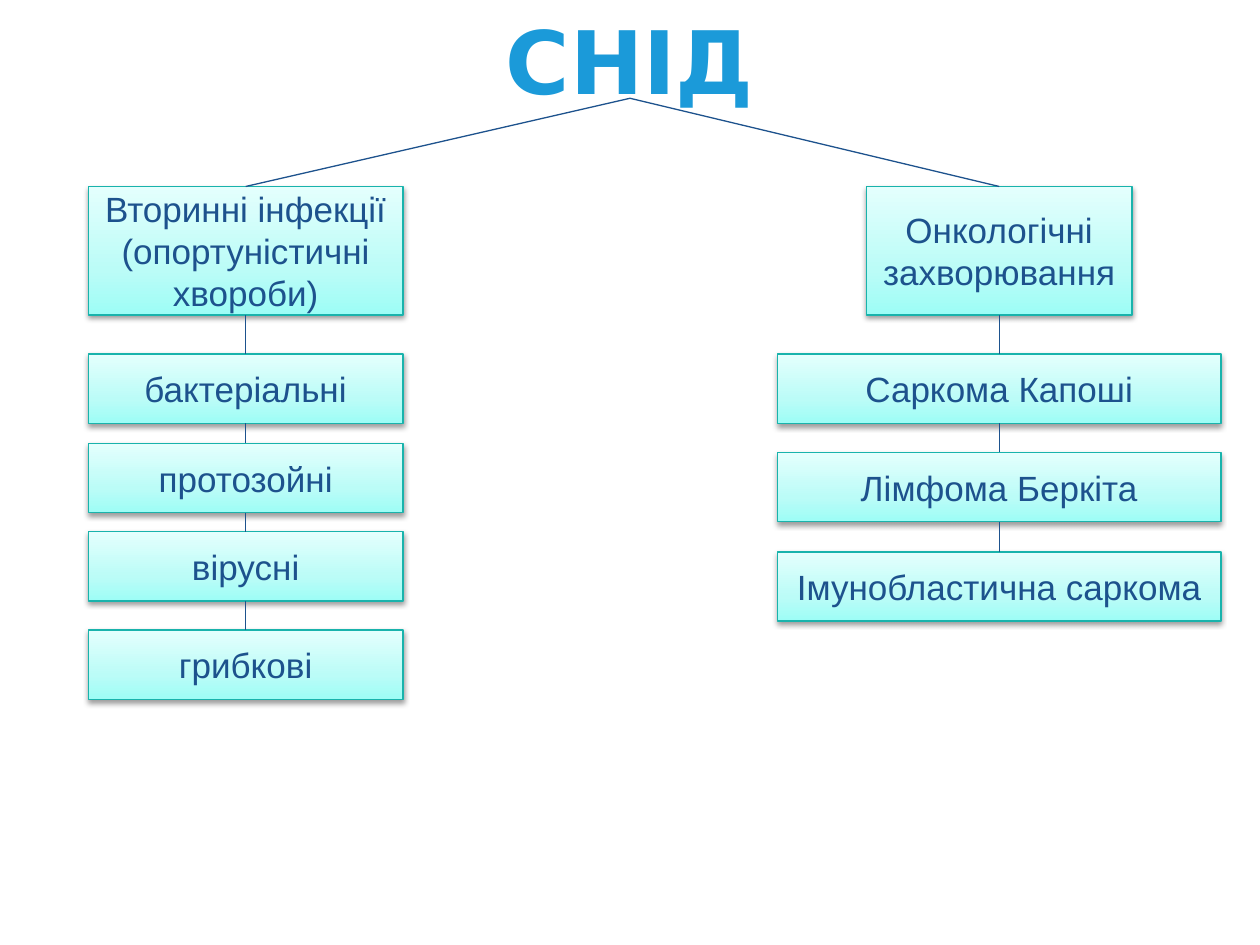
from itertools import pairwise

from lxml.etree import SubElement
from pptx import Presentation
from pptx.dml.color import RGBColor
from pptx.enum.shapes import MSO_CONNECTOR, MSO_SHAPE
from pptx.enum.text import MSO_ANCHOR, PP_ALIGN
from pptx.oxml import parse_xml
from pptx.oxml.ns import nsdecls, qn
from pptx.util import Inches, Pt

TITLE_BLUE = RGBColor(0x1B, 0x9A, 0xD9)
NAVY = RGBColor(0x1D, 0x52, 0x8D)
TEAL = RGBColor(0x19, 0xB3, 0xAC)
BLACK = RGBColor(0, 0, 0)
AQUA_STOPS = (
    (0, RGBColor(0x9D, 0xFD, 0xF6)),
    (35, RGBColor(0xBB, 0xFC, 0xF7)),
    (100, RGBColor(0xE4, 0xFF, 0xFD)),
)

TOP, BOTTOM = 0, 2
HEADING_TOP, HEADING_HEIGHT = 1.48, 1.02
ITEM_HEIGHT = 0.55

BRANCHES = (
    {
        "center": 1.95,
        "heading": ("Вторинні інфекції\n(опортуністичні хвороби)", 2.5),
        "item_width": 2.5,
        "items": (
            ("бактеріальні", 2.81),
            ("протозойні", 3.52),
            ("вірусні", 4.22),
            ("грибкові", 5),
        ),
    },
    {
        "center": 7.93,
        "heading": ("Онкологічні захворювання", 2.11),
        "item_width": 3.52,
        "items": (
            ("Саркома Капоші", 2.81),
            ("Лімфома Беркіта", 3.59),
            ("Імунобластична саркома", 4.38),
        ),
    },
)


def write_text(shape, text, font="Arial", size=20, color=NAVY, bold=False):
    """Fill a shape with centred text, one paragraph per line."""
    frame = shape.text_frame
    frame.word_wrap = True
    frame.vertical_anchor = MSO_ANCHOR.MIDDLE
    frame.text = text
    for paragraph in frame.paragraphs:
        paragraph.alignment = PP_ALIGN.CENTER
        paragraph.font.name = font
        paragraph.font.size = Pt(size)
        paragraph.font.bold = bold
        paragraph.font.color.rgb = color


def fill_aqua(shape):
    """Give a shape the three-stop gradient that lightens upwards."""
    shape.fill.gradient()
    shape.fill.gradient_angle = 90
    stops = "".join(
        f'<a:gs pos="{percent * 1000}"><a:srgbClr val="{color}"/></a:gs>'
        for percent, color in AQUA_STOPS
    )
    gradient = shape.element.spPr.find(qn("a:gradFill"))
    gradient.replace(
        gradient.find(qn("a:gsLst")),
        parse_xml(f"<a:gsLst {nsdecls('a')}>{stops}</a:gsLst>"),
    )


def cast_shadow(shape):
    """Add a soft shadow below a shape."""
    shape.shadow.inherit = False
    effects = shape.element.spPr.find(qn("a:effectLst"))
    shadow = SubElement(
        effects, qn("a:outerShdw"), blurRad=str(Pt(3.1)), dist=str(Pt(1.6)),
        dir="5400000", rotWithShape="0",
    )
    color = SubElement(shadow, qn("a:srgbClr"), val=str(BLACK))
    SubElement(color, qn("a:alpha"), val="38000")


def add_title(slide, text):
    """Add the slide's title at the root of the tree."""
    title = slide.shapes.add_textbox(Inches(0.5), Inches(0.17), Inches(9), Inches(0.61))
    write_text(title, text, font="DejaVu Sans", size=50, color=TITLE_BLUE, bold=True)
    return title


def add_node(slide, text, center, top, width, height):
    """Add a tree box centred on a horizontal position."""
    node = slide.shapes.add_shape(
        MSO_SHAPE.RECTANGLE, Inches(center - width / 2), Inches(top),
        Inches(width), Inches(height),
    )
    fill_aqua(node)
    node.line.color.rgb = TEAL
    node.line.width = Pt(0.75)
    cast_shadow(node)
    write_text(node, text)
    return node


def add_branch(slide, center, heading, item_width, items):
    """Add a heading box with its items and return them from the top down."""
    text, width = heading
    nodes = [add_node(slide, text, center, HEADING_TOP, width, HEADING_HEIGHT)]
    for text, top in items:
        nodes.append(add_node(slide, text, center, top, item_width, ITEM_HEIGHT))
    return nodes


def link(slide, upper, lower):
    """Connect the bottom of one shape to the top of another."""
    connector = slide.shapes.add_connector(MSO_CONNECTOR.STRAIGHT, 0, 0, 0, 0)
    connector.begin_connect(upper, BOTTOM)
    connector.end_connect(lower, TOP)
    connector.line.color.rgb = NAVY
    connector.line.width = Pt(0.75)
    SubElement(connector.element.spPr, qn("a:effectLst"))


def main():
    """Build the slide and save it."""
    presentation = Presentation()
    presentation.slide_width = Inches(10)
    presentation.slide_height = Inches(7.5)
    slide = presentation.slides.add_slide(presentation.slide_layouts[6])
    title = add_title(slide, "СНІД")
    chains = [[title, *add_branch(slide, **branch)] for branch in BRANCHES]
    for chain in chains:
        for upper, lower in pairwise(chain):
            link(slide, upper, lower)
    presentation.save("out.pptx")


if __name__ == "__main__":
    main()
